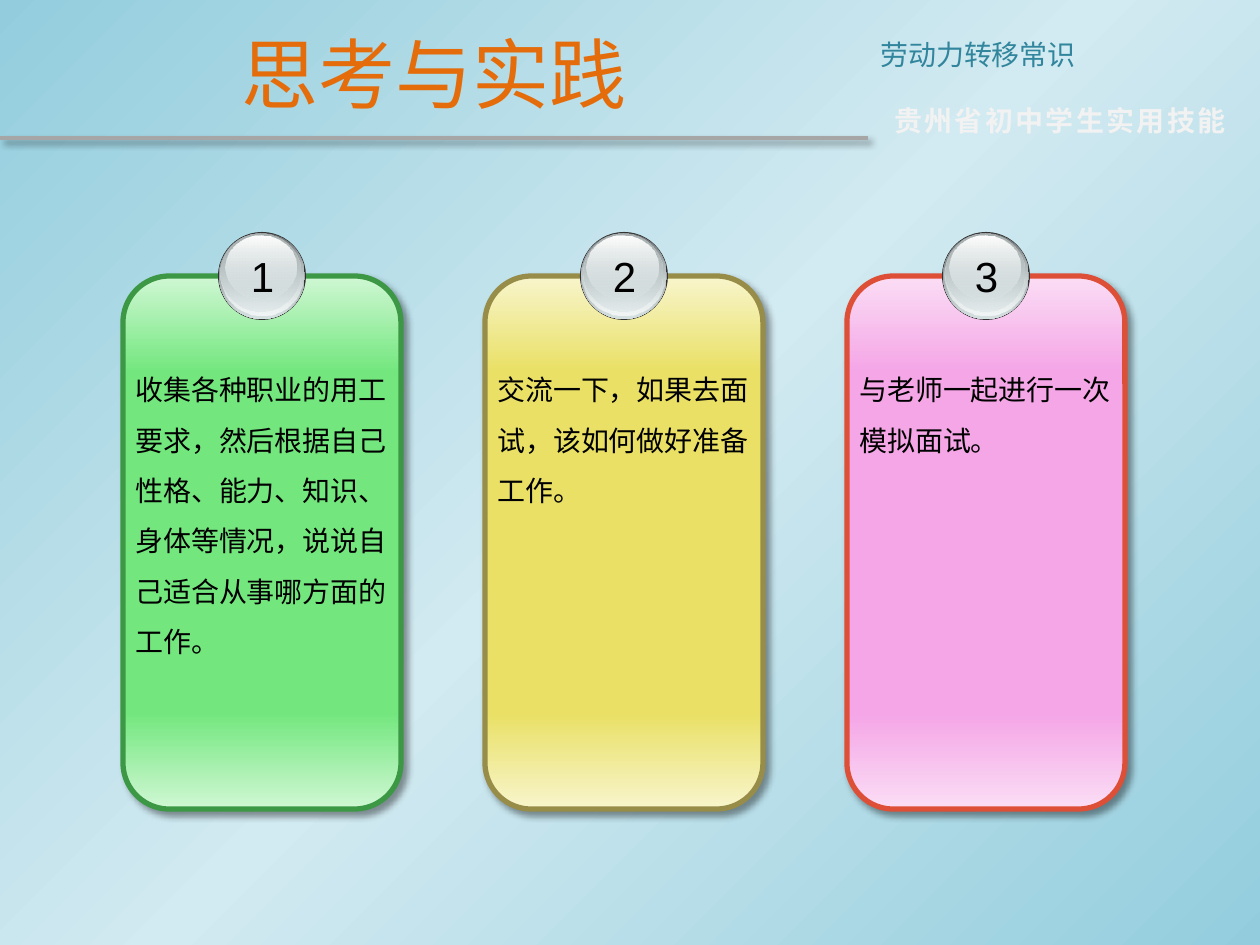
from dataclasses import dataclass

from lxml import etree
from pptx import Presentation
from pptx.dml.color import RGBColor
from pptx.enum.shapes import MSO_CONNECTOR, MSO_SHAPE
from pptx.enum.text import MSO_ANCHOR, MSO_AUTO_SIZE, PP_ALIGN
from pptx.oxml.ns import qn
from pptx.util import Emu, Pt

LINE = MSO_CONNECTOR.STRAIGHT
CARD, BALL = MSO_SHAPE.ROUNDED_RECTANGLE, MSO_SHAPE.OVAL
LEFT, CENTER, JUSTIFY = PP_ALIGN.LEFT, PP_ALIGN.CENTER, PP_ALIGN.JUSTIFY
MIDDLE = MSO_ANCHOR.MIDDLE
GROW = MSO_AUTO_SIZE.SHAPE_TO_FIT_TEXT
EMU_PER_PX = 914400 / 126
FIRST_CARD, CARD_PITCH = 123, 362


@dataclass(frozen=True)
class Theme:
    """Fonts, type sizes and colours of the slide."""
    cjk: str = "Noto Sans CJK SC"
    latin: str = "Arial"
    title_size: int = 44
    number_size: int = 24
    body_size: int = 16
    title: str = "E46C0A"
    topic: str = "31859C"
    slogan: str = "F2F2F2"
    ink: str = "000000"
    rule: str = "A6A6A6"
    rim: str = "333333"
    sky: tuple = ((0, "93CDDD"), (50, "D2EAF1"), (100, "93CDDD"))


THEME = Theme()

BALL_LAYERS = [
    ((96, 233, 86, 86), [(0, "636869"), (100, "D6E1E2")]),
    ((97, 233, 83, 83), [(0, "D6E1E2", 0), (100, "F1F5F5")]),
    ((98, 234, 79, 78), [(0, "AAB2B3"), (100, "D6E1E2", 48)]),
    ((102, 236, 71, 63), [(0, "FFFFFF"), (100, "D6E1E2", 38)]),
]

TASKS = [
    ("收集各种职业的用工要求，然后根据自己性格、能力、知识、身体等情况，说说自己适合从事哪方面的工作。",
     312, "D0F7D4", "73E77E", "3C9844"),
    ("交流一下，如果去面试，该如何做好准备工作。", 165, "F8F5CC", "E9E065", "978D48"),
    ("与老师一起进行一次模拟面试。", 115, "FBDDF5", "F4A6E6", "DD4F37"),
]


def px(*lengths):
    """Turn pixel lengths into EMU."""
    return [Emu(round(length * EMU_PER_PX)) for length in lengths]


def add_color(parent, color, opacity=100):
    """Append an RGB colour with an opacity in percent."""
    node = etree.SubElement(parent, qn("a:srgbClr"), val=color)
    if opacity < 100:
        etree.SubElement(node, qn("a:alpha"), val=str(opacity * 1000))


def set_gradient(fill, owner, stops, angle=90):
    """Give a fill a linear gradient with any number of stops."""
    fill.gradient()
    fill.gradient_angle = 360 - angle
    stop_list = owner.find(".//" + qn("a:gsLst"))
    for old in list(stop_list):
        stop_list.remove(old)
    for position, *color in stops:
        stop = etree.SubElement(stop_list, qn("a:gs"), pos=str(position * 1000))
        add_color(stop, *color)


def add_shadow(shape):
    """Cast a soft shadow towards the lower right."""
    properties = shape._element.find(qn("p:spPr"))
    effects = properties.find(qn("a:effectLst"))
    if effects is None:
        effects = etree.SubElement(properties, qn("a:effectLst"))
    shadow = etree.SubElement(
        effects, qn("a:outerShdw"), blurRad=str(Pt(4)), dist=str(Pt(3)),
        dir="2700000", algn="tl", rotWithShape="0")
    add_color(shadow, THEME.ink, 40)


def write(frame, text, size, color, font=THEME.cjk, align=LEFT, spacing=None):
    """Write one formatted paragraph into a text frame."""
    paragraph = frame.paragraphs[0]
    paragraph.text = text
    paragraph.alignment = align
    paragraph.line_spacing = spacing
    paragraph.font.size = Pt(size)
    paragraph.font.color.rgb = RGBColor.from_string(color)
    paragraph.font.name = font
    etree.SubElement(paragraph.font._rPr, qn("a:ea"), typeface=font)
    return paragraph


def add_text(shapes, box, *content, wrap=True, **style):
    """Add a text box that grows with its text."""
    frame = shapes.add_textbox(*px(*box)).text_frame
    frame.word_wrap = wrap
    frame.auto_size = GROW
    return write(frame, *content, **style)


def add_shape(shapes, kind, box, stops=None, color=None):
    """Add an unlined shape with a gradient or a solid fill."""
    shape = shapes.add_shape(kind, *px(*box))
    shape.shadow.inherit = False
    shape.line.fill.background()
    if stops:
        set_gradient(shape.fill, shape._element, stops)
    else:
        shape.fill.solid()
        shape.fill.fore_color.rgb = RGBColor.from_string(color)
    return shape


def set_line(shape, color, width):
    """Set the colour and the width of a line."""
    shape.line.color.rgb = RGBColor.from_string(color)
    shape.line.width = Pt(width)


def add_header(slide):
    """Place the title, the rule under it and the two course labels."""
    rule = slide.shapes.add_connector(LINE, *px(0, 138, 868, 138))
    set_line(rule, THEME.rule, 2.25)
    add_shadow(rule)
    add_text(slide.shapes, (868, 31, 392, 47), "劳动力转移常识",
             THEME.body_size, THEME.topic, align=JUSTIFY)
    slogan = add_text(slide.shapes, (882, 97, 378, 53), "贵州省初中学生实用技能",
                      THEME.body_size, THEME.slogan)
    slogan.font.bold = True
    slogan.font._rPr.set("spc", "140")
    title = slide.shapes.title
    title.left, title.top, title.width, title.height = px(0, 9, 868, 128)
    title.text_frame.vertical_anchor = MIDDLE
    write(title.text_frame, "思考与实践", THEME.title_size, THEME.title, align=CENTER)


def add_number(shapes, left, number):
    """Add a glossy ball with a number."""
    add_shape(shapes, BALL, (left + 95, 232, 88, 88), color=THEME.rim)
    for (offset, *rest), stops in BALL_LAYERS:
        add_shape(shapes, BALL, (left + offset, *rest), stops)
    add_text(shapes, (left + 115, 244, 49, 63), str(number), THEME.number_size,
             THEME.ink, font=THEME.latin, align=CENTER, wrap=False)


def add_task(slide, number, text, text_height, pale, tone, border):
    """Add a numbered task card as one group."""
    left = FIRST_CARD + (number - 1) * CARD_PITCH
    shapes = slide.shapes.add_group_shape().shapes
    stops = [(0, pale), (18, tone), (82, tone), (100, pale)]
    card = add_shape(shapes, CARD, (left, 276, 278, 533), stops)
    set_line(card, border, 3)
    add_shadow(card)
    add_text(shapes, (left, 350, 278, text_height), text,
             THEME.body_size, THEME.ink, spacing=1.5)
    add_number(shapes, left, number)


def main():
    """Build and save the slide."""
    deck = Presentation()
    deck.slide_width, deck.slide_height = px(1260, 945)
    slide = deck.slides.add_slide(deck.slide_layouts[5])
    set_gradient(slide.background.fill, slide._element, THEME.sky, 45)
    add_header(slide)
    for number, task in enumerate(TASKS, 1):
        add_task(slide, number, *task)
    deck.save("out.pptx")


if __name__ == "__main__":
    main()
